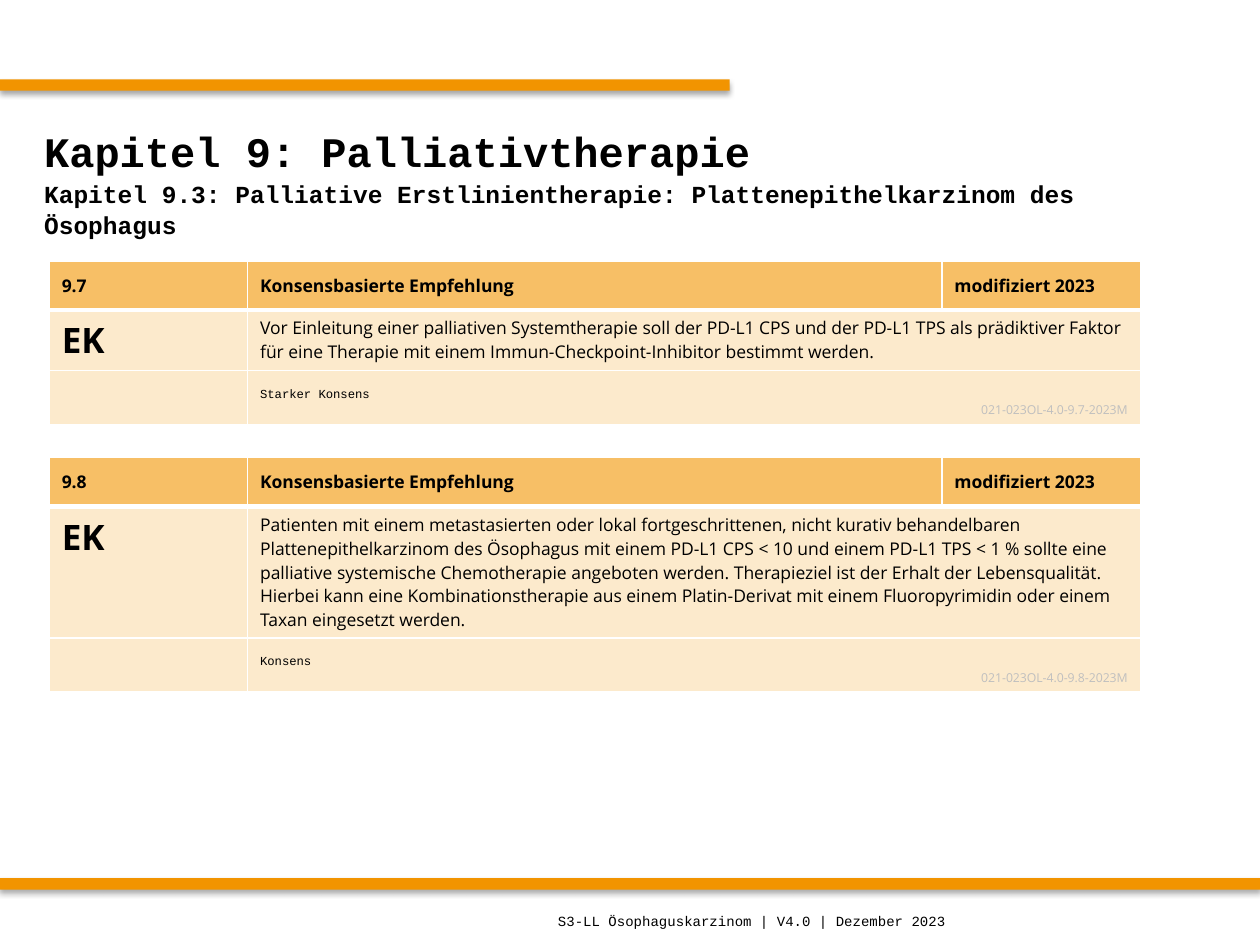
from dataclasses import dataclass

import lxml.etree
import pptx
import pptx.dml.color
import pptx.enum.shapes
import pptx.enum.text
import pptx.oxml
import pptx.oxml.ns
import pptx.util

WIDTH, HEIGHT = 10, 7.5
COLORS = {
    "bar": "F29400",
    "header": "F7BF66",
    "body": "FCEACC",
    "border": "FFFFFF",
    "text": "000000",
    "code": "BFBFBF",
}
MONO, SANS = "Courier New", "Open Sans"
ALIGN = pptx.enum.text.PP_ALIGN
ANCHOR = pptx.enum.text.MSO_ANCHOR
COLUMN_UNITS = (2, 7, 2)
TABLE_LEFT, TABLE_WIDTH = 0.39, 8.66


@dataclass
class Bar:
    top: float
    width_share: float


@dataclass
class Recommendation:
    number: str
    paragraphs: tuple[str, ...]
    consensus: str
    code: str
    top: float
    row_heights: tuple[float, float, float]


BARS = (Bar(0.63, 0.579), Bar(6.97, 1))
RECOMMENDATIONS = (
    Recommendation(
        "9.7",
        (
            "Vor Einleitung einer palliativen Systemtherapie soll der PD-L1 CPS und der PD-L1 TPS "
            "als prädiktiver Faktor für eine Therapie mit einem Immun-Checkpoint-Inhibitor bestimmt werden.",
        ),
        "Starker Konsens",
        "021-023OL-4.0-9.7-2023M",
        2.07,
        (0.39, 0.48, 0.43),
    ),
    Recommendation(
        "9.8",
        (
            "Patienten mit einem metastasierten oder lokal fortgeschrittenen, nicht kurativ behandelbaren "
            "Plattenepithelkarzinom des Ösophagus mit einem PD-L1 CPS < 10 und einem PD-L1 TPS < 1 % "
            "sollte eine palliative systemische Chemotherapie angeboten werden. "
            "Therapieziel ist der Erhalt der Lebensqualität.",
            "Hierbei kann eine Kombinationstherapie aus einem Platin-Derivat mit einem Fluoropyrimidin "
            "oder einem Taxan eingesetzt werden.",
        ),
        "Konsens",
        "021-023OL-4.0-9.8-2023M",
        3.63,
        (0.39, 1.04, 0.43),
    ),
)


def rgb(name: str) -> pptx.dml.color.RGBColor:
    return pptx.dml.color.RGBColor.from_string(COLORS[name])


def place(shape, left: float, top: float, width: float, height: float) -> None:
    shape.left, shape.top = pptx.util.Inches(left), pptx.util.Inches(top)
    shape.width, shape.height = pptx.util.Inches(width), pptx.util.Inches(height)


def add_text(frame, text: str, *, size: float, font: str = SANS, bold: bool = False,
             color: str = "text", align=ALIGN.LEFT, spacing: float = 1.0) -> None:
    paragraph = frame.add_paragraph() if frame.text else frame.paragraphs[0]
    paragraph.alignment = align
    paragraph.line_spacing = spacing
    paragraph.space_before = pptx.util.Pt(0)
    run = paragraph.add_run()
    run.text = text
    run.font.name = font
    run.font.size = pptx.util.Pt(size)
    run.font.bold = bold
    run.font.color.rgb = rgb(color)


def add_bar(slide, bar: Bar) -> None:
    shape = slide.shapes.add_shape(
        pptx.enum.shapes.MSO_SHAPE.RECTANGLE, 0, pptx.util.Inches(bar.top),
        pptx.util.Inches(WIDTH * bar.width_share), pptx.util.Inches(0.09))
    shape.fill.solid()
    shape.fill.fore_color.rgb = rgb("bar")
    shape.line.fill.background()
    shape.shadow.inherit = False
    effects = shape._element.spPr.find(pptx.oxml.ns.qn("a:effectLst"))
    effects.append(pptx.oxml.parse_xml(
        f'<a:outerShdw {pptx.oxml.ns.nsdecls("a")} blurRad="{pptx.util.Pt(3.1)}" '
        f'dist="{pptx.util.Pt(1.8)}" dir="5400000" rotWithShape="0">'
        '<a:srgbClr val="000000"><a:alpha val="35000"/></a:srgbClr></a:outerShdw>'))


def format_cell(cell, row: int) -> None:
    properties = cell._tc.get_or_add_tcPr()
    widths = {"L": 1, "R": 1, "T": 3 if row == 1 else 1, "B": 3 if row == 0 else 1}
    for side, points in widths.items():
        line = lxml.etree.SubElement(
            properties, pptx.oxml.ns.qn(f"a:ln{side}"), w=str(pptx.util.Pt(points)))
        fill = lxml.etree.SubElement(line, pptx.oxml.ns.qn("a:solidFill"))
        lxml.etree.SubElement(fill, pptx.oxml.ns.qn("a:srgbClr"), val=COLORS["border"])
    cell.fill.solid()
    cell.fill.fore_color.rgb = rgb("header" if row == 0 else "body")


def add_recommendation(slide, item: Recommendation) -> None:
    table = slide.shapes.add_table(
        3, 3, pptx.util.Inches(TABLE_LEFT), pptx.util.Inches(item.top),
        pptx.util.Inches(TABLE_WIDTH), pptx.util.Inches(sum(item.row_heights))).table
    table.first_row = table.horz_banding = False
    for column, units in zip(table.columns, COLUMN_UNITS):
        column.width = pptx.util.Inches(TABLE_WIDTH * units / sum(COLUMN_UNITS))
    for index, height in enumerate(item.row_heights):
        table.rows[index].height = pptx.util.Inches(height)
        for column in range(3):
            format_cell(table.cell(index, column), index)

    for column, text in enumerate((item.number, "Konsensbasierte Empfehlung", "modifiziert 2023")):
        cell = table.cell(0, column)
        cell.vertical_anchor = ANCHOR.MIDDLE
        add_text(cell.text_frame, text, size=10, bold=True)
    for row in (1, 2):
        table.cell(row, 1).merge(table.cell(row, 2))

    add_text(table.cell(1, 0).text_frame, "EK", size=20, bold=True)
    for text in item.paragraphs:
        add_text(table.cell(1, 1).text_frame, text, size=10)
    result = table.cell(2, 1)
    result.vertical_anchor = ANCHOR.BOTTOM
    add_text(result.text_frame, item.consensus, size=7, font=MONO)
    add_text(result.text_frame, item.code, size=7, color="code", align=ALIGN.RIGHT)


def add_title(slide) -> None:
    title = slide.shapes.title
    place(title, 0.25, 0.85, 9.5, 1.17)
    frame = title.text_frame
    frame.auto_size = pptx.enum.text.MSO_AUTO_SIZE.NONE
    frame.vertical_anchor = ANCHOR.MIDDLE
    add_text(frame, "Kapitel 9: Palliativtherapie", size=24, font=MONO, bold=True, spacing=1.08)
    add_text(frame, "Kapitel 9.3: Palliative Erstlinientherapie: Plattenepithelkarzinom des Ösophagus",
             size=14, font=MONO, bold=True, spacing=1.08)


def add_footer(slide) -> None:
    footer = slide.shapes.add_textbox(0, 0, 0, 0)
    place(footer, 4.33, 7.11, 5.51, HEIGHT - 7.11)
    footer.text_frame.word_wrap = True
    footer.text_frame.vertical_anchor = ANCHOR.MIDDLE
    add_text(footer.text_frame, "S3-LL Ösophaguskarzinom | V4.0 | Dezember 2023", size=8, font=MONO)


def main() -> None:
    presentation = pptx.Presentation()
    presentation.slide_width = pptx.util.Inches(WIDTH)
    presentation.slide_height = pptx.util.Inches(HEIGHT)
    slide = presentation.slides.add_slide(presentation.slide_layouts[5])
    for bar in BARS:
        add_bar(slide, bar)
    add_title(slide)
    for item in RECOMMENDATIONS:
        add_recommendation(slide, item)
    add_footer(slide)
    presentation.save("out.pptx")


if __name__ == "__main__":
    main()
